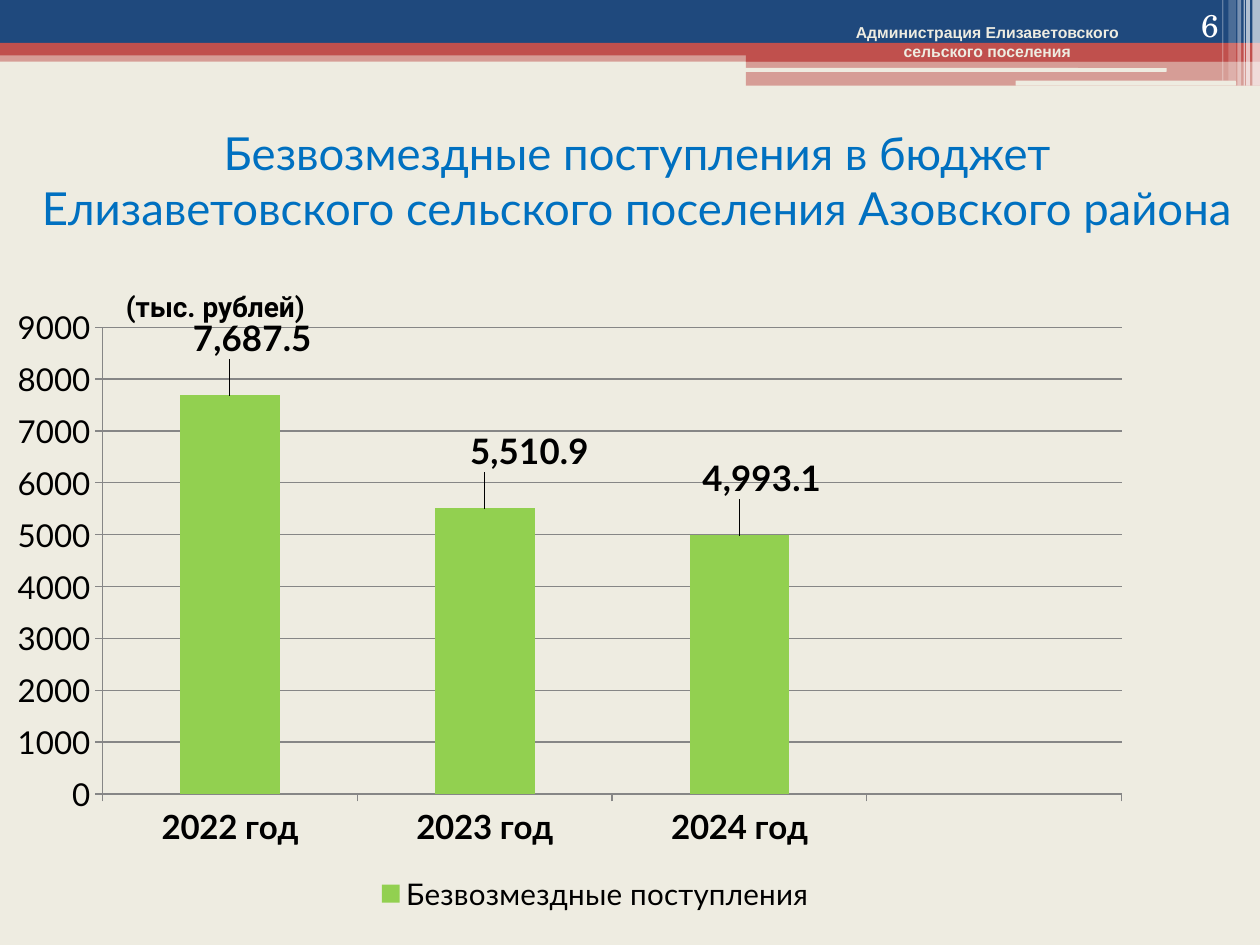
from collections import namedtuple

from lxml.etree import SubElement
from pptx import Presentation
from pptx.chart.data import CategoryChartData
from pptx.dml.color import RGBColor
from pptx.enum.chart import XL_CHART_TYPE as ChartType
from pptx.enum.chart import XL_LABEL_POSITION as LabelPosition
from pptx.enum.chart import XL_LEGEND_POSITION as LegendPosition
from pptx.enum.chart import XL_TICK_MARK as TickMark
from pptx.enum.shapes import MSO_SHAPE as Preset
from pptx.enum.text import MSO_ANCHOR as Anchor
from pptx.enum.text import PP_ALIGN as Align
from pptx.oxml import parse_xml
from pptx.oxml.ns import nsdecls, qn
from pptx.util import Inches, Pt

COLUMNS, ROWS = 100, 75
CELL = Inches(0.1)
CREAM, NAVY, RED, WHITE = "EEECE1", "1F497D", "C0504D", "FFFFFF"
BLUE, GREEN, GREY, BLACK = "0070C0", "92D050", "868686", "000000"
NUMBER_FORMAT = "#,##0.0"


class Box(namedtuple("Box", "left top width height")):
    """An area measured in grid columns and rows."""

    def area(self, left, top, width, height):
        return Box(self.left + left, self.top + top, width, height)

    def lengths(self):
        return [int(value * CELL) for value in self]


def color(hex_code):
    return RGBColor.from_string(hex_code)


def style(target, values):
    for name, value in values.items():
        setattr(target, name, value)


def style_font(font, size, name, hex_code=BLACK, bold=False):
    style(font, {"size": Pt(size), "name": name, "bold": bold})
    font.color.rgb = color(hex_code)


def paint(fill, hex_code, opacity=100):
    fill.solid()
    fill.fore_color.rgb = color(hex_code)
    if opacity < 100:
        tint = fill._xPr.find(qn("a:solidFill"))[0]
        SubElement(tint, qn("a:alpha"), val=str(opacity * 1000))


def add_bar(page, box, hex_code, opacity=100, preset=Preset.RECTANGLE):
    bar = page.shapes.add_shape(preset, *box.lengths())
    bar.shadow.inherit = False
    bar.line.fill.background()
    paint(bar.fill, hex_code, opacity)


def write(frame, lines, font, align=Align.LEFT, anchor=Anchor.TOP):
    style(frame, {"word_wrap": True, "vertical_anchor": anchor})
    for number, line in enumerate(lines):
        para = frame.add_paragraph() if number else frame.paragraphs[0]
        style(para, {"text": line, "alignment": align})
        for span in para.runs:
            style_font(span.font, *font)


def add_text(page, box, lines, font, **layout):
    write(page.shapes.add_textbox(*box.lengths()).text_frame, lines, font, **layout)


def add_header(page, box):
    width = box.width
    right = 59.2
    for left, top, height, hex_code, opacity in [
        (0, 4, 0.9, RED, 50),
        (0, 0, 3.4, NAVY, 100),
        (0, 3.4, 1, RED, 100),
        (right, 3.9, 1, RED, 100),
        (right, 4.8, 2, RED, 50),
    ]:
        add_bar(page, box.area(left, top, width - left, height), hex_code, opacity)
    for gap in [(59.1, 5.4, 33.5, 0.3), (80.6, 6.4, 17.5, 0.4)]:
        add_bar(page, box.area(*gap), CREAM, preset=Preset.ROUNDED_RECTANGLE)
    for left, stripe, height, opacity in [
        (99.4, 0.6, 6.8, 65),
        (98.9, 0.3, 6.8, 65),
        (98.7, 0.1, 6.8, 60),
        (98.2, 0.3, 6.8, 40),
        (97.5, 0.6, 6.4, 20),
        (97, 0.1, 6.4, 30),
    ]:
        add_bar(page, box.area(left, 0, stripe, height), WHITE, opacity)
    add_text(page, box.area(62.8, 1.3, 31.1, 4),
             ["Администрация Елизаветовского", "сельского поселения"],
             (9, "Arial", CREAM, True), align=Align.CENTER)
    add_text(page, box.area(89.4, 0, 8.3, 4), ["6"],
             (18, "TeX Gyre Schola", WHITE), align=Align.RIGHT, anchor=Anchor.BOTTOM)


def add_title(page, box):
    title = page.shapes.title
    style(title, dict(zip(("left", "top", "width", "height"), box.lengths())))
    style(title.text_frame, {"margin_left": 0, "margin_right": 0})
    write(title.text_frame,
          ["Безвозмездные поступления в бюджет\v"
           "Елизаветовского сельского поселения Азовского района"],
          (26, "Lato", BLUE), align=Align.CENTER, anchor=Anchor.MIDDLE)


def manual_layout(target="", **values):
    """Return a chart layout element; values are shares of the chart's size."""
    modes = "".join(f'<c:{side}Mode val="edge"/>' for side in "xy") if target else ""
    inner = '<c:layoutTarget val="inner"/>' if target == "inner" else ""
    sizes = "".join(f'<c:{key} val="{value}"/>' for key, value in values.items())
    return parse_xml(f'<c:layout {nsdecls("c")}><c:manualLayout>'
                     f"{inner}{modes}{sizes}</c:manualLayout></c:layout>")


def place(parent, layout, after=None):
    """Put a layout into a chart element in place of the one it has."""
    for old in parent.findall(qn("c:layout")):
        parent.remove(old)
    parent.insert(0 if after is None else parent.index(parent.find(qn(after))) + 1, layout)


def format_axis(axis, size, bold=False):
    style(axis, {"major_tick_mark": TickMark.OUTSIDE, "minor_tick_mark": TickMark.NONE})
    style_font(axis.tick_labels.font, size, "Lato", bold=bold)
    axis.format.line.color.rgb = color(GREY)


def format_labels(series, shifts):
    label_font = (20, "Lato", BLACK, True)
    for number, (across, down) in enumerate(shifts):
        label = series.points[number].data_label
        style_font(label.font, *label_font)
        label.position = LabelPosition.OUTSIDE_END
        element = label._dLbl
        place(element, manual_layout(x=across, y=down), "c:idx")
        element.insert(2, parse_xml(
            f'<c:numFmt {nsdecls("c")} formatCode="{NUMBER_FORMAT}" sourceLinked="0"/>'))
    labels = series.data_labels
    style(labels, {"show_value": True, "number_format": NUMBER_FORMAT,
                   "number_format_is_linked": False})
    style_font(labels.font, *label_font)


def add_receipts_chart(page, box):
    data = CategoryChartData()
    data.categories = ["2022 год", "2023 год", "2024 год", ""]
    data.add_series("Безвозмездные поступления", [7687.5, 5510.9, 4993.1, None])
    chart = page.shapes.add_chart(
        ChartType.COLUMN_CLUSTERED, *box.lengths(), data).chart
    style(chart, {"has_title": False, "has_legend": True})
    style_font(chart.font, 18, "TeX Gyre Schola")
    style(chart.plots[0], {"gap_width": 155, "vary_by_categories": False})

    format_axis(chart.category_axis, 19, bold=True)
    values = chart.value_axis
    format_axis(values, 18)
    style(values, {"minimum_scale": 0, "maximum_scale": 9000, "major_unit": 1000,
                   "has_major_gridlines": True})
    values.major_gridlines.format.line.color.rgb = color(GREY)
    style(values.tick_labels, {"number_format": "General",
                               "number_format_is_linked": False})

    series = chart.plots[0].series[0]
    paint(series.format.fill, GREEN)
    format_labels(series, [(0.02, -0.05), (0.04, -0.05), (0.02, -0.05)])

    legend = chart.legend
    style(legend, {"position": LegendPosition.BOTTOM, "include_in_layout": False})
    style_font(legend.font, 17, "Lato")
    place(legend._element, manual_layout("edge", x=0.31, y=0.91, w=0.4, h=0.08),
          "c:legendPos")
    place(chart._chartSpace.chart.plotArea,
          manual_layout("inner", x=0.07, y=0.04, w=0.91, h=0.75))


def build_receipts_slide(deck):
    page = deck.slides.add_slide(deck.slide_layouts[5])
    paint(page.background.fill, CREAM)
    whole = Box(0, 0, COLUMNS, ROWS)
    add_header(page, whole.area(0, 0, COLUMNS, 6.8))
    add_title(page, whole.area(1.2, 8.4, 98.8, 11.7))
    add_text(page, whole.area(9, 22.5, 18.1, 3.7), ["(тыс. рублей)"],
             (16, "Roboto", BLACK, True))
    add_receipts_chart(page, whole.area(1.4, 24, 89.4, 49.4))


def main():
    deck = Presentation()
    style(deck, {"slide_width": COLUMNS * CELL, "slide_height": ROWS * CELL})
    build_receipts_slide(deck)
    deck.save("out.pptx")


if __name__ == "__main__":
    main()
